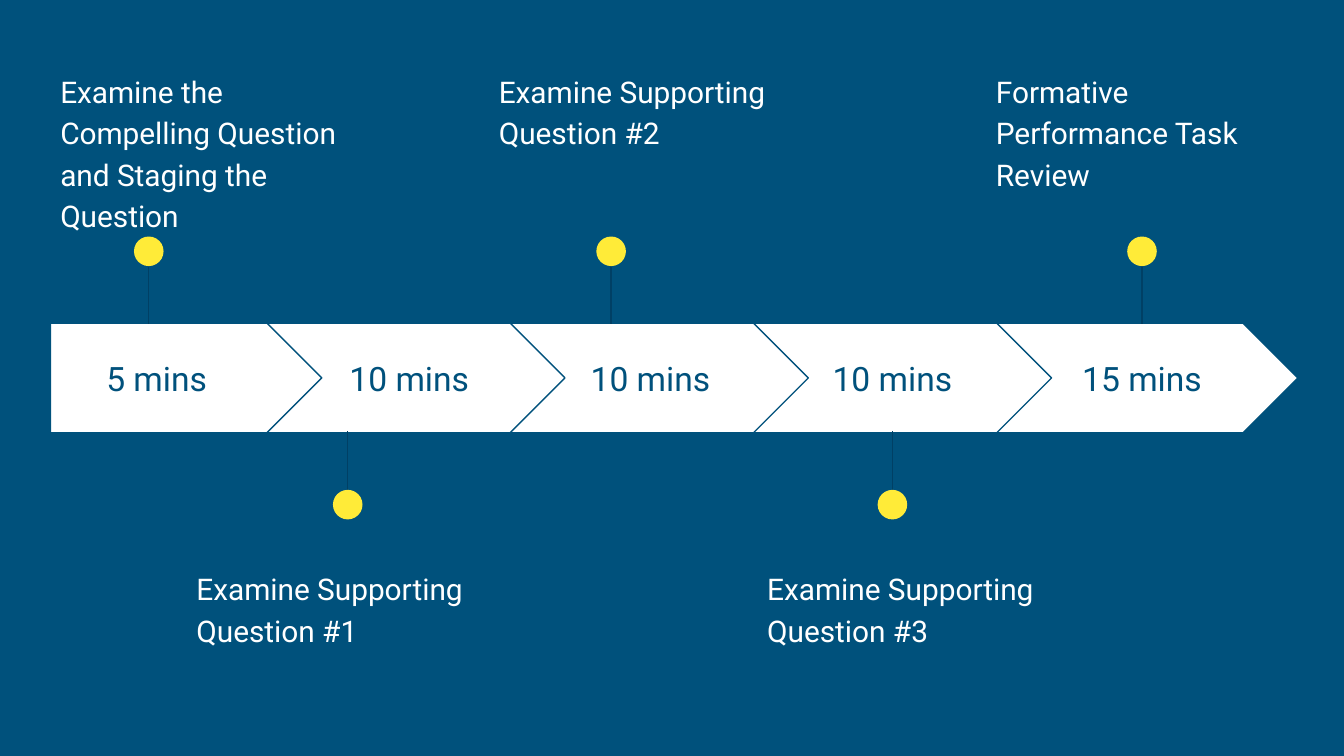
from dataclasses import dataclass

from pptx import Presentation
from pptx.dml.color import RGBColor
from pptx.enum.shapes import MSO_CONNECTOR, MSO_SHAPE
from pptx.enum.text import MSO_ANCHOR, PP_ALIGN
from pptx.oxml.ns import qn
from pptx.slide import Slide
from pptx.util import Emu, Inches, Pt
from lxml import etree

PENTAGON, CHEVRON, OVAL = MSO_SHAPE.PENTAGON, MSO_SHAPE.CHEVRON, MSO_SHAPE.OVAL
STRAIGHT = MSO_CONNECTOR.STRAIGHT
TOP, MIDDLE = MSO_ANCHOR.TOP, MSO_ANCHOR.MIDDLE
LEFT, CENTER = PP_ALIGN.LEFT, PP_ALIGN.CENTER

BLUE = RGBColor(0x00, 0x51, 0x7C)
DARK_BLUE = RGBColor(0x00, 0x40, 0x65)
YELLOW = RGBColor(0xFF, 0xEB, 0x38)
WHITE = RGBColor(0xFF, 0xFF, 0xFF)
FONT = "Roboto"

WIDTH = Inches(10)
HEIGHT = Emu(WIDTH * 9 // 16)
COLUMNS, ROWS = 100, 56.25

BAND_TOP, BAND_HEIGHT = 24.05, 8.15
CHEVRON_LEFT, CHEVRON_WIDTH, CHEVRON_PITCH = 19.87, 22.4, 18.1
TIME_TOP, TIME_HEIGHT = 25.6, 5.1
NOTE_WIDTH, NOTE_HEIGHT = 24.5, 9.9
DOT = 2.2


@dataclass(frozen=True)
class Side:
    note_top: float
    dot_top: float
    pin_start: float
    pin_end: float


@dataclass(frozen=True)
class Step:
    time: str
    note: str
    time_left: float
    pin: float
    note_left: float
    side: Side


ABOVE = Side(4.1, 17.6, 18, 24.1)
BELOW = Side(41.1, 36.45, 38.2, 32.1)

STEPS = [
    Step("5 mins", "Examine the Compelling Question and Staging the Question",
         3.7, 11.07, 3.5, ABOVE),
    Step("10 mins", "Examine Supporting Question #1", 23.25, 25.87, 13.63, BELOW),
    Step("10 mins", "Examine Supporting Question #2", 41.2, 45.47, 36.13, ABOVE),
    Step("10 mins", "Examine Supporting Question #3", 59.2, 66.4, 56.1, BELOW),
    Step("15 mins", "Formative Performance Task Review", 77.77, 84.97, 73.12, ABOVE),
]


def col(n: float) -> Emu:
    return Emu(round(WIDTH * n / COLUMNS))


def row(n: float) -> Emu:
    return Emu(round(HEIGHT * n / ROWS))


def box(x: float, y: float, w: float, h: float) -> tuple[Emu, Emu, Emu, Emu]:
    return col(x), row(y), col(w), row(h)


def add_text(s: Slide, text: str, area: tuple[Emu, Emu, Emu, Emu], size: int,
             color: RGBColor, align: PP_ALIGN, anchor: MSO_ANCHOR,
             spacing: float) -> None:
    tf = s.shapes.add_textbox(*area).text_frame
    tf.word_wrap = True
    tf.vertical_anchor = anchor
    tf.margin_left = tf.margin_right = tf.margin_top = tf.margin_bottom = Inches(0.1)
    p = tf.paragraphs[0]
    p.alignment = align
    p.line_spacing = spacing
    r = p.add_run()
    r.text = text
    r.font.name = FONT
    r.font.size = Pt(size)
    r.font.color.rgb = color


def add_arrow(s: Slide, index: int) -> None:
    if index == 0:
        kind, left, width = PENTAGON, 3.75, 20.45
    else:
        kind, width = CHEVRON, CHEVRON_WIDTH
        left = CHEVRON_LEFT + (index - 1) * CHEVRON_PITCH
    sp = s.shapes.add_shape(kind, *box(left, BAND_TOP, width, BAND_HEIGHT))
    sp.shadow.inherit = False
    sp.adjustments[0] = 0.5
    sp.fill.solid()
    sp.fill.fore_color.rgb = WHITE
    sp.line.color.rgb = BLUE
    sp.line.width = Pt(0.75)


def add_pin(s: Slide, x: float, side: Side) -> None:
    pin = s.shapes.add_connector(STRAIGHT, col(x), row(side.pin_start),
                                 col(x), row(side.pin_end))
    pin.line.color.rgb = DARK_BLUE
    pin.line.width = Pt(0.75)
    etree.SubElement(pin._element.spPr, qn("a:effectLst"))
    dot = s.shapes.add_shape(OVAL, *box(x - DOT / 2, side.dot_top, DOT, DOT))
    dot.shadow.inherit = False
    dot.fill.solid()
    dot.fill.fore_color.rgb = YELLOW
    dot.line.fill.background()


def add_step(s: Slide, index: int, step: Step) -> None:
    add_arrow(s, index)
    time_width = 15.9 if index == 0 else 14.4
    add_text(s, step.time, box(step.time_left, TIME_TOP, time_width, TIME_HEIGHT),
             18, BLUE, CENTER, MIDDLE, 1.0)
    add_pin(s, step.pin, step.side)
    add_text(s, step.note,
             box(step.note_left, step.side.note_top, NOTE_WIDTH, NOTE_HEIGHT),
             16, WHITE, LEFT, TOP, 1.15)


def main() -> None:
    prs = Presentation()
    prs.slide_width, prs.slide_height = WIDTH, HEIGHT
    s = prs.slides.add_slide(prs.slide_layouts.get_by_name("Blank"))
    s.background.fill.solid()
    s.background.fill.fore_color.rgb = BLUE
    for index, step in enumerate(STEPS):
        add_step(s, index, step)
    prs.save("out.pptx")


if __name__ == "__main__":
    main()
